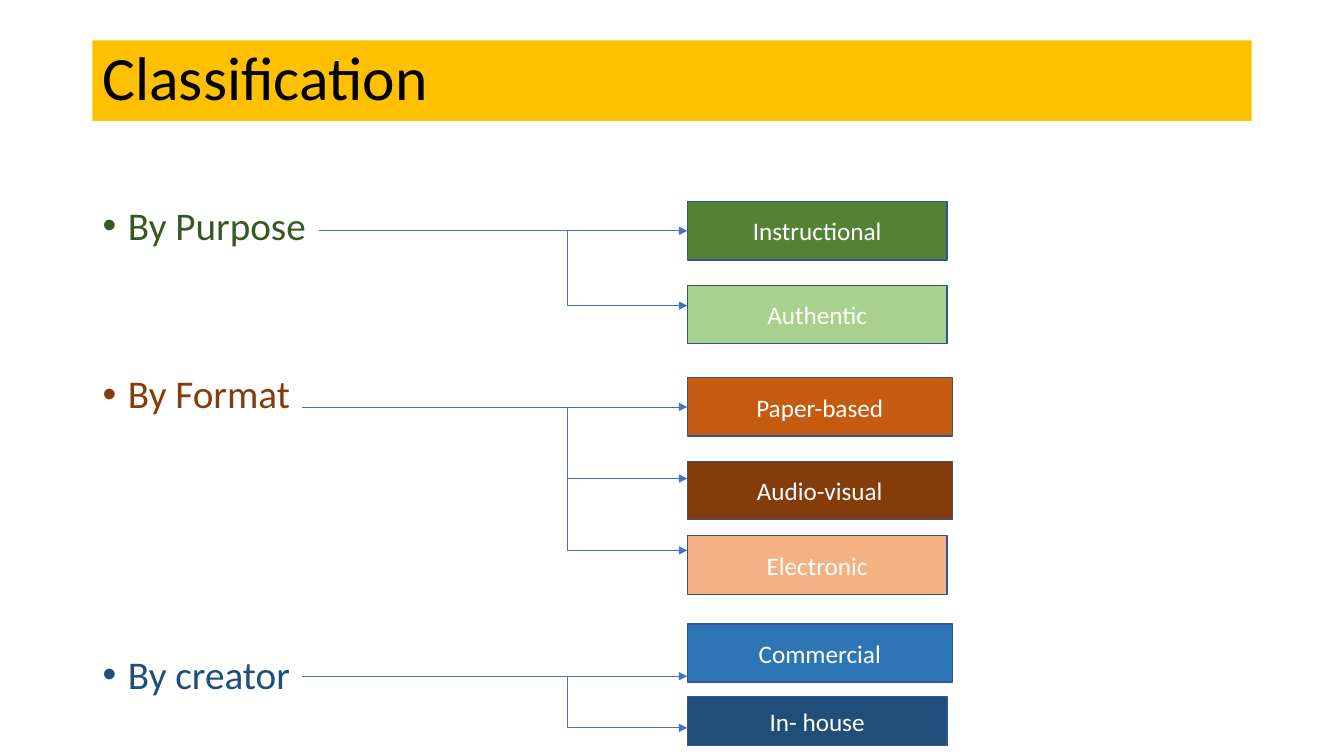
from dataclasses import dataclass
from typing import Optional

from pptx import Presentation
from pptx.dml.color import RGBColor
from pptx.enum.shapes import MSO_CONNECTOR, MSO_SHAPE
from pptx.enum.text import MSO_ANCHOR, MSO_AUTO_SIZE, PP_ALIGN
from pptx.oxml.ns import qn
from pptx.util import Cm, Pt
from lxml.etree import SubElement

FONT = "Calibri"
BLACK = RGBColor(0x00, 0x00, 0x00)
WHITE = RGBColor(0xFF, 0xFF, 0xFF)
GOLD = RGBColor(0xFF, 0xC0, 0x00)
DARK_GREEN = RGBColor(0x38, 0x57, 0x23)
GREEN = RGBColor(0x54, 0x82, 0x35)
LIGHT_GREEN = RGBColor(0xA9, 0xD1, 0x8E)
BROWN = RGBColor(0x84, 0x3C, 0x0B)
ORANGE = RGBColor(0xC5, 0x5A, 0x11)
PEACH = RGBColor(0xF4, 0xB1, 0x83)
NAVY = RGBColor(0x1F, 0x4E, 0x79)
BLUE = RGBColor(0x2E, 0x75, 0xB6)
OUTLINE = RGBColor(0x32, 0x54, 0x91)
LINE_BLUE = RGBColor(0x44, 0x72, 0xC4)

COLUMN_WIDTH = Cm(6.68)
BRANCH_LENGTH = Cm(3.02)


@dataclass
class Region:
    """A rectangle on the page, in centimetres."""
    left: float
    top: float
    width: float
    height: float


@dataclass
class Branch:
    """A labelled box, placed from the top of its group; no arrow means its middle."""
    label: str
    fill: RGBColor
    top: float
    width: float = 6.55
    height: float = 1.47
    arrow: Optional[float] = None


TITLE_REGION = Region(2.33, 1.02, 29.21, 2.03)
BODY_REGION = Region(2.33, 5.08, 29.21, 13.97)

CATEGORIES = [
    ("By Purpose", DARK_GREEN, 0),
    ("By Format", BROWN, 90),
    ("By creator", NAVY, 170),
]

GROUPS = [
    (Region(8.05, 5.08, 15.95, 3.58), [
        Branch("Instructional", GREEN, 0),
        Branch("Authentic", LIGHT_GREEN, 2.11, arrow=2.62),
    ]),
    (Region(7.62, 9.52, 16.38, 5.47), [
        Branch("Paper-based", ORANGE, 0, width=6.68),
        Branch("Audio-visual", BROWN, 2.11, width=6.68, arrow=2.54),
        Branch("Electronic", PEACH, 3.97, height=1.5, arrow=4.35),
    ]),
    (Region(7.62, 15.72, 16.38, 3.07), [
        Branch("Commercial", BLUE, 0, width=6.68, arrow=1.32),
        Branch("In- house", NAVY, 1.83, height=1.24, arrow=2.62),
    ]),
]


def place(shape, region):
    """Move a shape into a region."""
    shape.left, shape.top = Cm(region.left), Cm(region.top)
    shape.width, shape.height = Cm(region.width), Cm(region.height)


def add_span(para, text, size, color):
    """Add one formatted run to a paragraph."""
    span = para.add_run()
    span.text = text
    span.font.name = FONT
    span.font.size = Pt(size)
    span.font.color.rgb = color


def add_title(page, region, text):
    """Fill the title placeholder as a gold band."""
    title = page.shapes.title
    place(title, region)
    title.fill.solid()
    title.fill.fore_color.rgb = GOLD
    frame = title.text_frame
    frame.auto_size = MSO_AUTO_SIZE.NONE
    frame.vertical_anchor = MSO_ANCHOR.MIDDLE
    para = frame.paragraphs[0]
    para.alignment = PP_ALIGN.LEFT
    para.line_spacing = 0.9
    add_span(para, text, 44, BLACK)


def add_categories(page, region, categories):
    """Fill the body placeholder with the bulleted categories."""
    body = page.placeholders[1]
    place(body, region)
    frame = body.text_frame
    frame.auto_size = MSO_AUTO_SIZE.NONE
    for index, (text, color, gap) in enumerate(categories):
        para = frame.add_paragraph() if index else frame.paragraphs[0]
        properties = para._p.get_or_add_pPr()
        properties.set("marL", str(Cm(0.64)))
        properties.set("indent", str(-Cm(0.64)))
        SubElement(properties, qn("a:buFont"), typeface="Arial")
        SubElement(properties, qn("a:buChar"), char="•")
        para.line_spacing = 0.9
        para.space_before = Pt(gap)
        add_span(para, text, 28, color)


def add_line(page, start, end, arrow=False):
    """Draw a thin straight connector, with an arrowhead if asked."""
    connector = page.shapes.add_connector(MSO_CONNECTOR.STRAIGHT, *start, *end)
    connector.line.color.rgb = LINE_BLUE
    connector.line.width = Pt(0.5)
    properties = connector.element.spPr
    if arrow:
        SubElement(properties.find(qn("a:ln")), qn("a:tailEnd"), type="triangle")
    SubElement(properties, qn("a:effectLst"))
    return connector


def add_box(page, left, top, branch):
    """Draw the labelled rectangle of a branch."""
    box = page.shapes.add_shape(
        MSO_SHAPE.RECTANGLE, left, top, Cm(branch.width), Cm(branch.height))
    box.shadow.inherit = False
    box.fill.solid()
    box.fill.fore_color.rgb = branch.fill
    box.line.color.rgb = OUTLINE
    box.line.width = Pt(1)
    frame = box.text_frame
    frame.word_wrap = True
    frame.vertical_anchor = MSO_ANCHOR.MIDDLE
    para = frame.paragraphs[0]
    para.alignment = PP_ALIGN.CENTER
    add_span(para, branch.label, 18, WHITE)
    return box


def add_group(page, region, branches):
    """Draw a lead line that forks to the boxes at the right of the region."""
    column = Cm(region.left) + Cm(region.width) - COLUMN_WIDTH
    trunk = column - BRANCH_LENGTH
    previous = None
    for branch in branches:
        box = add_box(page, column, Cm(region.top) + Cm(branch.top), branch)
        joined = branch.arrow is None
        level = box.top + box.height // 2 if joined else Cm(region.top) + Cm(branch.arrow)
        if previous is None:
            add_line(page, (Cm(region.left), level), (trunk, level))
        else:
            add_line(page, (trunk, previous), (trunk, level))
        arrow = add_line(page, (trunk, level), (column, level), arrow=True)
        if joined:
            arrow.end_connect(box, 1)
        previous = level


def main():
    """Build the classification slide."""
    deck = Presentation()
    deck.slide_width, deck.slide_height = Cm(33.87), Cm(19.05)
    page = deck.slides.add_slide(deck.slide_layouts[1])
    add_title(page, TITLE_REGION, "Classification")
    add_categories(page, BODY_REGION, CATEGORIES)
    for region, branches in GROUPS:
        add_group(page, region, branches)
    deck.save("out.pptx")


if __name__ == "__main__":
    main()
